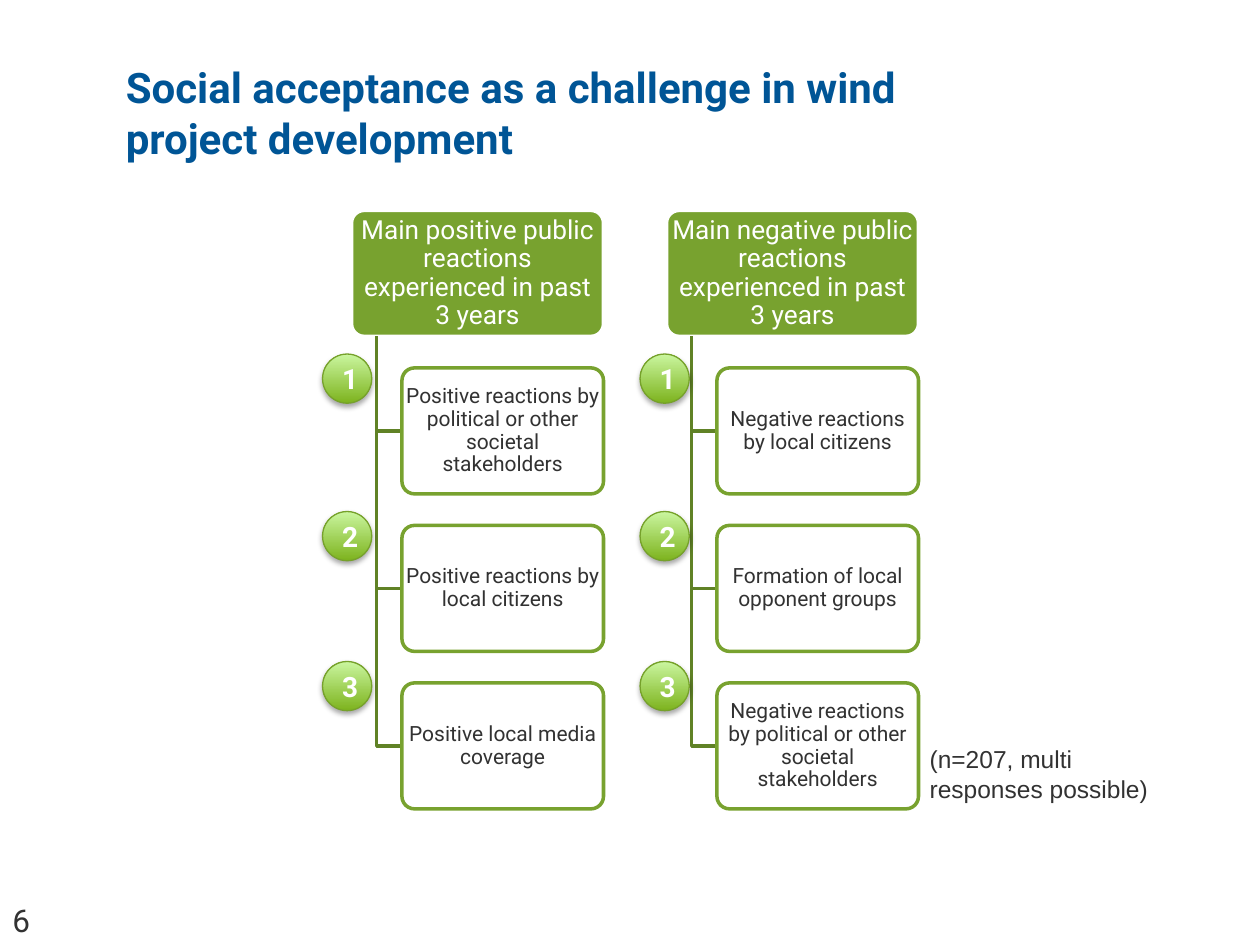
from dataclasses import dataclass

from lxml.etree import SubElement
from pptx import Presentation
from pptx.dml.color import RGBColor
from pptx.enum.shapes import MSO_SHAPE as Preset
from pptx.enum.text import MSO_ANCHOR as Anchor, PP_ALIGN as Align
from pptx.oxml.ns import qn
from pptx.util import Inches, Pt

COLORS = {
    "title": "005596",
    "text": "323232",
    "white": "FFFFFF",
    "green": "78A22F",
    "branch": "608226",
    "badge_dark": "7DB31E",
    "badge_light": "CAF69F",
    "badge_line": "76A12B",
    "shadow": "000000",
}
HEADER_TOP, BOX_HEIGHT, HEADER_WIDTH = 1.67, 1, 2
ROW_PITCH = 1.25
INDENT = 0.2
BADGE_SIZE = 0.39
BADGE_TOPS = (2.81, 4.06, 5.25)


@dataclass
class Column:
    left: float
    badge_left: float
    header: str
    reactions: tuple[str, ...]


@dataclass
class Label:
    text: str
    left: float
    top: float
    width: float
    height: float
    format: dict


COLUMNS = (
    Column(2.79, 2.56, "Main positive public reactions experienced in past 3 years", (
        "Positive reactions by political or other societal stakeholders",
        "Positive reactions by local citizens",
        "Positive local media coverage",
    )),
    Column(5.29, 5.08, "Main negative public reactions experienced in past 3 years", (
        "Negative reactions by local citizens",
        "Formation of local opponent groups",
        "Negative reactions by political or other societal stakeholders",
    )),
)
LABELS = (
    Label("Social acceptance as a challenge in wind project development",
          0.9, 0.44, 7.38, 0.71, {"size": Pt(24), "bold": True, "color": "title"}),
    Label("6", 0, 7.1, 0.75, 0.4, {"size": Pt(18)}),
    Label("(n=207, multi responses possible)",
          7.28, 5.86, 2.13, 0.57, {"size": Pt(14), "name": "Arial"}),
)


def rgb(key: str) -> RGBColor:
    return RGBColor.from_string(COLORS[key])


def write(shape, text: str, **format_values) -> None:
    shape.text_frame.word_wrap = True
    paragraph = shape.text_frame.paragraphs[0]
    run = paragraph.add_run()
    run.text = text
    values = {"name": "Roboto", "color": "text"} | format_values
    run.font.color.rgb = rgb(values.pop("color"))
    for name, value in values.items():
        setattr(run.font, name, value)


def center(shape) -> None:
    shape.text_frame.vertical_anchor = Anchor.MIDDLE
    shape.text_frame.paragraphs[0].alignment = Align.CENTER


def outline(shape, color: str, width: float) -> None:
    shape.shadow.inherit = False
    shape.line.color.rgb = rgb(color)
    shape.line.width = Pt(width)


def add_label(slide, label: Label) -> None:
    shape = slide.shapes.add_textbox(
        Inches(label.left), Inches(label.top), Inches(label.width), Inches(label.height))
    write(shape, label.text, **label.format)


def add_box(slide, left: float, top: float, width: float, text: str,
            fill: str, line: str, **format_values) -> None:
    shape = slide.shapes.add_shape(
        Preset.ROUNDED_RECTANGLE, Inches(left), Inches(top), Inches(width), Inches(BOX_HEIGHT))
    shape.adjustments[0] = 0.1
    shape.fill.solid()
    shape.fill.fore_color.rgb = rgb(fill)
    outline(shape, line, 2)
    for side in ("left", "top", "right", "bottom"):
        setattr(shape.text_frame, f"margin_{side}", 0)
    write(shape, text, **format_values)
    center(shape)
    shape.text_frame.paragraphs[0].line_spacing = 0.9


def add_branch(slide, left: float, top: float, bottom: float) -> None:
    builder = slide.shapes.build_freeform(Inches(left), Inches(top))
    builder.add_line_segments(
        [(Inches(left), Inches(bottom)), (Inches(left + INDENT), Inches(bottom))], close=False)
    shape = builder.convert_to_shape()
    shape.fill.background()
    outline(shape, "branch", 2)


def add_badge(slide, left: float, top: float, number: int) -> None:
    shape = slide.shapes.add_shape(
        Preset.OVAL, Inches(left), Inches(top), Inches(BADGE_SIZE), Inches(BADGE_SIZE))
    shape.fill.gradient()
    shape.fill.gradient_angle = 90
    for stop, color in zip(shape.fill.gradient_stops, ("badge_dark", "badge_light")):
        stop.color.rgb = rgb(color)
    outline(shape, "badge_line", 0.75)
    effects = shape._element.spPr.find(qn("a:effectLst"))
    shadow = SubElement(effects, qn("a:outerShdw"), blurRad=str(Pt(3.1)),
                        dist=str(Pt(1.8)), dir="5400000", rotWithShape="0")
    color = SubElement(shadow, qn("a:srgbClr"), val=COLORS["shadow"])
    SubElement(color, qn("a:alpha"), val="35000")
    write(shape, str(number), size=Pt(16), bold=True, color="white")
    center(shape)


def add_column(slide, column: Column) -> None:
    add_box(slide, column.left, HEADER_TOP, HEADER_WIDTH, column.header,
            "green", "white", size=Pt(15), color="white")
    for row, reaction in enumerate(column.reactions, start=1):
        top = HEADER_TOP + row * ROW_PITCH
        add_branch(slide, column.left + INDENT, HEADER_TOP + BOX_HEIGHT, top + BOX_HEIGHT / 2)
        add_box(slide, column.left + 2 * INDENT, top, HEADER_WIDTH - 2 * INDENT, reaction,
                "white", "green", size=Pt(12))


def main() -> None:
    presentation = Presentation()
    presentation.slide_width, presentation.slide_height = Inches(10), Inches(7.5)
    slide = presentation.slides.add_slide(presentation.slide_layouts[6])
    for label in LABELS:
        add_label(slide, label)
    for column in COLUMNS:
        add_column(slide, column)
    for column in COLUMNS:
        for number, top in enumerate(BADGE_TOPS, start=1):
            add_badge(slide, column.badge_left, top, number)
    presentation.save("out.pptx")


if __name__ == "__main__":
    main()
